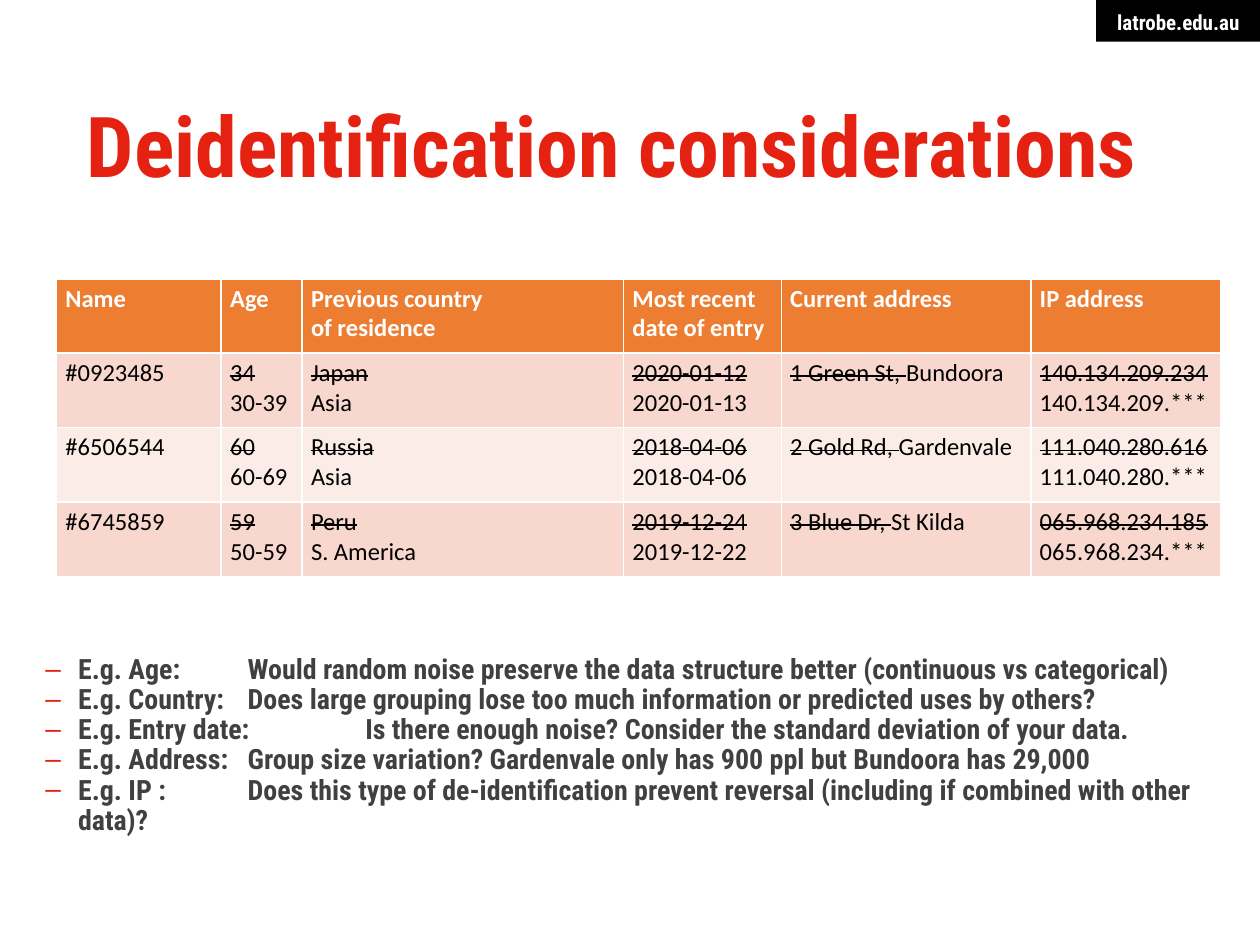
import pptx
import pptx.dml.color
import pptx.enum.text
import pptx.util
from lxml import etree
from pptx.util import Cm

THEME = {
    "heading font": "Roboto Condensed", "table font": "Calibri",
    "red": "E52212", "grey": "404040", "black": "000000", "white": "FFFFFF",
    "header": "ED7D31", "bands": ("F8D7CE", "FCECE8"),
    "tag size": 12, "title size": 48, "table size": 14, "list size": 16,
}


def color(name):
    return pptx.dml.color.RGBColor.from_string(THEME.get(name, name))


def style(paragraph, kind, font, ink, bold):
    paragraph.font.name = THEME[font]
    paragraph.font.size = pptx.util.Pt(THEME[kind + " size"])
    paragraph.font.color.rgb = color(ink)
    paragraph.font.bold = bold


deck = pptx.Presentation()
deck.slide_width, deck.slide_height = Cm(25.4), Cm(19.05)
slide = deck.slides.add_slide(deck.slide_layouts[1])
title, considerations = slide.placeholders

# Web address tag
tag = slide.shapes.add_shape(1, Cm(22.1), Cm(0), Cm(3.3), Cm(0.84))
tag.shadow.inherit = False
tag.fill.solid()
tag.fill.fore_color.rgb = color("black")
tag.line.fill.background()
address = tag.text_frame
address.word_wrap = False
address.margin_left = address.margin_right = Cm(0.41)
address.margin_top, address.margin_bottom = Cm(0.2), Cm(0.13)
address.text = "latrobe.edu.au"
address.paragraphs[0].alignment = pptx.enum.text.PP_ALIGN.RIGHT
style(address.paragraphs[0], "tag", "heading font", "white", True)

# Title
title.left, title.top, title.width, title.height = Cm(1.75), Cm(1.98), Cm(21.9), Cm(3.68)
heading = title.text_frame
heading.margin_left = heading.margin_right = heading.margin_top = heading.margin_bottom = 0
heading.vertical_anchor = pptx.enum.text.MSO_ANCHOR.TOP
heading.auto_size = pptx.enum.text.MSO_AUTO_SIZE.NONE
heading.text = "Deidentification considerations"
heading.paragraphs[0].alignment = pptx.enum.text.PP_ALIGN.LEFT
heading.paragraphs[0].line_spacing = pptx.util.Pt(55)
style(heading.paragraphs[0], "title", "heading font", "red", True)

# Records: (struck out, kept) in every column after the name
headers = ["Name", "Age", "Previous country\nof residence", "Most recent\vdate of entry",
           "Current address", "IP address"]
records = [
    [("", "#0923485"), ("34", "30-39"), ("Japan", "Asia"), ("2020-01-12", "2020-01-13"),
     ("1 Green St, ", "Bundoora"), ("140.134.209.234", "140.134.209.***")],
    [("", "#6506544"), ("60", "60-69"), ("Russia", "Asia"), ("2018-04-06", "2018-04-06"),
     ("2 Gold Rd, ", "Gardenvale"), ("111.040.280.616", "111.040.280.***")],
    [("", "#6745859"), ("59", "50-59"), ("Peru", "S. America"), ("2019-12-24", "2019-12-22"),
     ("3 Blue Dr, ", "St Kilda"), ("065.968.234.185", "065.968.234.***")],
]
widths = [3.32, 1.63, 6.48, 3.18, 5.03, 3.83]
table = slide.shapes.add_table(len(records) + 1, len(widths), Cm(1.14), Cm(5.62),
                               Cm(sum(widths)), Cm(6)).table
for column, width in zip(table.columns, widths):
    column.width = Cm(width)

for cell, header in zip(table.rows[0].cells, headers):
    cell.text = header
for index, record in enumerate(records, 1):
    for cell, (struck, kept) in zip(table.rows[index].cells, record):
        line = cell.text_frame.paragraphs[0]
        if struck:
            old = line.add_run()
            old.text = struck
            old._r.get_or_add_rPr().set("strike", "sngStrike")
            if not struck.endswith(" "):
                line = cell.text_frame.add_paragraph()
        line.add_run().text = kept

for index, row in enumerate(table.rows):
    for cell in row.cells:
        cell.margin_left = cell.margin_right = Cm(0.18)
        cell.margin_top = cell.margin_bottom = Cm(0.1)
        cell.fill.solid()
        cell.fill.fore_color.rgb = color(THEME["bands"][(index - 1) % 2] if index else "header")
        for line in cell.text_frame.paragraphs:
            style(line, "table", "table font", "black" if index else "white", index == 0)

# Considerations
questions = [
    "E.g. Age: \tWould random noise preserve the data structure better (continuous vs categorical)",
    "E.g. Country: \tDoes large grouping lose too much information or predicted uses by others?",
    "E.g. Entry date: \tIs there enough noise? Consider the standard deviation of your data.",
    "E.g. Address: \tGroup size variation? Gardenvale only has 900 ppl but Bundoora has 29,000",
    "E.g. IP :\tDoes this type of de-identification prevent reversal "
    "(including if combined with other data)?",
]
considerations.left, considerations.top = Cm(0), Cm(13.08)
considerations.width, considerations.height = Cm(25.4), Cm(3.33)
considerations.text_frame.auto_size = pptx.enum.text.MSO_AUTO_SIZE.NONE
considerations.text_frame.text = "\n".join(questions)
for question in considerations.text_frame.paragraphs:
    question.level = 1
    question.line_spacing = 0.9
    question.space_before = pptx.util.Pt(0)
    properties = question._p.get_or_add_pPr()
    properties.set("marL", str(Cm(1.32)))
    properties.set("indent", str(Cm(-0.66)))
    namespace = properties.nsmap["a"]
    bullet_color = etree.SubElement(properties, f"{{{namespace}}}buClr")
    etree.SubElement(bullet_color, f"{{{namespace}}}srgbClr", val=THEME["red"])
    etree.SubElement(properties, f"{{{namespace}}}buChar", char="–")
    tabs = etree.SubElement(properties, f"{{{namespace}}}tabLst")
    for stop in (4.74, 7.11):
        etree.SubElement(tabs, f"{{{namespace}}}tab", pos=str(Cm(stop)), algn="l")
    style(question, "list", "heading font", "grey", True)

deck.save("out.pptx")
